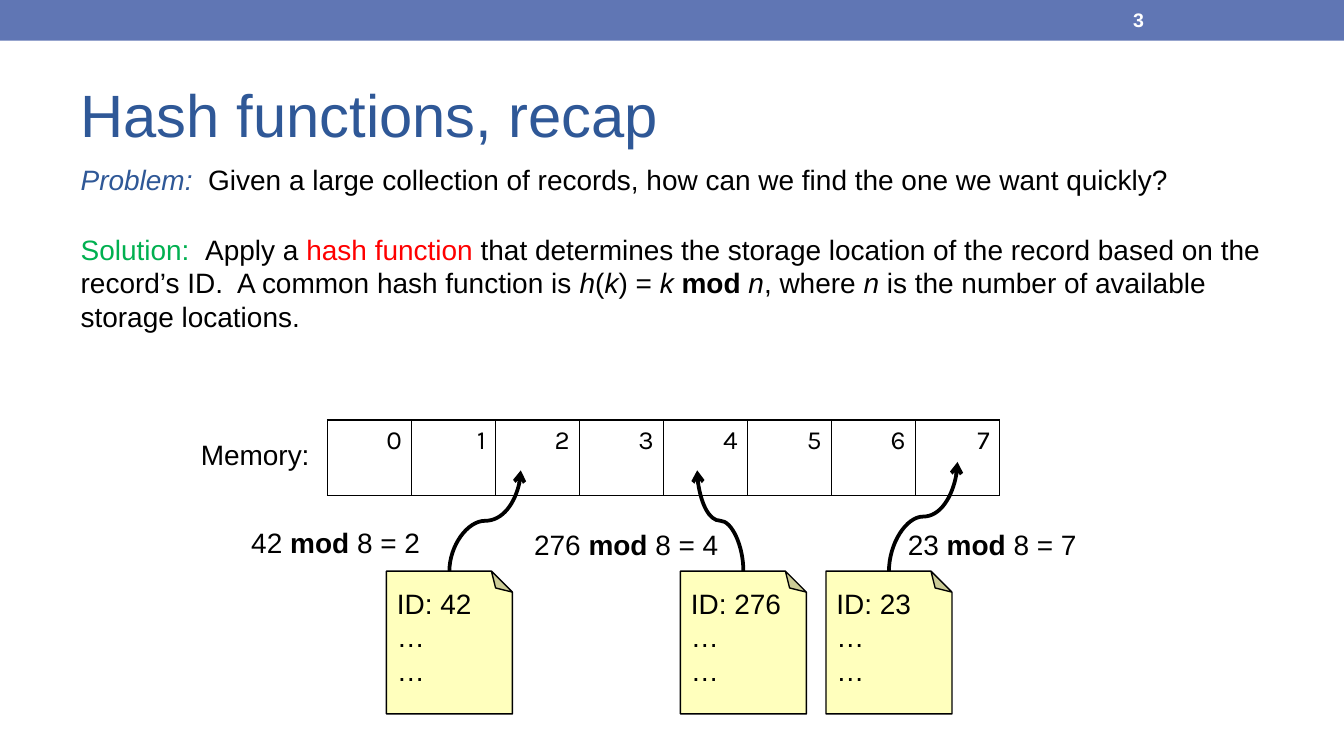
"""Build the slide that recaps hash functions with a memory table and three records."""
from lxml import etree
from pptx import Presentation
from pptx.dml.color import RGBColor
from pptx.enum.shapes import MSO_CONNECTOR, MSO_SHAPE
from pptx.enum.text import MSO_ANCHOR, MSO_AUTO_SIZE, PP_ALIGN
from pptx.oxml.ns import qn
from pptx.util import Pt

PX = 9525
CURVE = MSO_CONNECTOR.CURVE
RECT, NOTE = MSO_SHAPE.RECTANGLE, MSO_SHAPE.FOLDED_CORNER
MIDDLE, TOP = MSO_ANCHOR.MIDDLE, MSO_ANCHOR.TOP
LEFT, RIGHT = PP_ALIGN.LEFT, PP_ALIGN.RIGHT
FIXED = MSO_AUTO_SIZE.NONE
HEX = {
    "bar": "6076B4",
    "blue": "2F5897",
    "green": "00B050",
    "red": "FF0000",
    "black": "000000",
    "white": "FFFFFF",
    "note": "FFFFBD",
}
RGB = {name: RGBColor.from_string(code) for name, code in HEX.items()}


def write(para, parts, size=15, face="Arial"):
    """Add runs of (text, colour, style), where style may hold b and i."""
    for text, color, style in parts:
        run = para.add_run()
        run.text = text
        font = run.font
        font.name, font.size = face, Pt(size)
        font.color.rgb = RGB[color]
        font.bold, font.italic = "b" in style, "i" in style


def label(x, y, w, h, lines):
    """Add an unwrapped text box with one list of runs per line."""
    box = slide.shapes.add_textbox(x * PX, y * PX, w * PX, h * PX)
    frame = box.text_frame
    frame.word_wrap = False
    for i, parts in enumerate(lines):
        para = frame.add_paragraph() if i else frame.paragraphs[0]
        write(para, parts)
    return frame


prs = Presentation()
prs.slide_width, prs.slide_height = 960 * PX, 540 * PX
slide = prs.slides.add_slide(prs.slide_layouts[1])
shapes = slide.shapes

bar = shapes.add_shape(RECT, 0, 0, 960 * PX, 29 * PX)
bar.shadow.inherit = False
bar.fill.solid()
bar.fill.fore_color.rgb = RGB["bar"]
bar.line.fill.background()

title, body = shapes.title, slide.placeholders[1]
for holder, y, h, anchor in ((title, 42, 78, MIDDLE), (body, 111, 192, TOP)):
    holder.left, holder.top = 48 * PX, y * PX
    holder.width, holder.height = 864 * PX, h * PX
    holder.text_frame.auto_size = FIXED
    holder.text_frame.vertical_anchor = anchor

head = title.text_frame.paragraphs[0]
head.alignment = LEFT
write(head, [("Hash functions, recap", "blue", "")], 32)

problem = [
    ("Problem:  ", "blue", "i"),
    ("Given a large collection of records, how can we find the one we want quickly?", "black", ""),
]
answer = [
    ("Solution:  ", "green", ""),
    ("Apply a ", "black", ""),
    ("hash function ", "red", ""),
    ("that determines the storage location of the record based on the "
     "record’s ID.  A common hash function is ", "black", ""),
    ("h", "black", "i"),
    ("(", "black", ""),
    ("k", "black", "i"),
    (") = ", "black", ""),
    ("k ", "black", "i"),
    ("mod ", "black", "b"),
    ("n", "black", "i"),
    (", where ", "black", ""),
    ("n", "black", "i"),
    (" is the number of available storage locations.", "black", ""),
]
frame = body.text_frame
for para, parts, gap in (
    (frame.paragraphs[0], problem, 3.6),
    (frame.add_paragraph(), answer, 19.5),
):
    para.space_before = Pt(gap)
    props = para._p.get_or_add_pPr()
    props.set("marL", "0")
    props.set("indent", "0")
    etree.SubElement(props, qn("a:buNone"))
    write(para, parts)

table = shapes.add_table(1, 8, 234 * PX, 300 * PX, 480 * PX, 54 * PX).table
table.first_row = table.horz_banding = False
for i in range(8):
    table.columns[i].width = 60 * PX
    cell = table.cell(0, i)
    cell.margin_left = cell.margin_right = 7 * PX
    cell.margin_top = cell.margin_bottom = 4 * PX
    para = cell.text_frame.paragraphs[0]
    para.alignment = RIGHT
    write(para, [(str(i), "black", "")], 14, "Karla")
    props = cell._tc.get_or_add_tcPr()
    for side in ("lnL", "lnR", "lnT", "lnB"):
        edge = etree.SubElement(props, qn("a:" + side), w=str(Pt(1)))
        fill = etree.SubElement(edge, qn("a:solidFill"))
        etree.SubElement(fill, qn("a:srgbClr"), val=HEX["black"])
    cell.fill.background()

label(134, 308, 98, 34, [[("Memory:", "black", "")]])

records = (
    (276, 42, 2, (170, 371, 141), (321, 372, 336)),
    (486, 276, 4, (372, 372, 153), (531, 498, 336)),
    (590, 23, 7, (639, 372, 148), (635, 684, 330)),
)
for x, key, slot, (lx, ly, lw), (x1, x2, top) in records:
    note = shapes.add_shape(NOTE, x * PX, 408 * PX, 90 * PX, 102 * PX)
    note.shadow.inherit = False
    note._element.spPr.xfrm.set("flipV", "1")
    note.fill.solid()
    note.fill.fore_color.rgb = RGB["note"]
    note.line.color.rgb = RGB["black"]
    note.line.width = Pt(0.75)
    lines = (f"ID: {key}", "…", "…")
    label(x - 2, 414, 84, 83, [[(line, "black", "")] for line in lines])

    mx, my = (x1 + x2) / 2, (408 + top) / 2
    rise, run = (408 - top) / 2, (x2 - x1) / 2
    ends = (mx - rise, my - run, mx + rise, my + run)
    arrow = shapes.add_connector(CURVE, *(int(v * PX) for v in ends))
    arrow.line.color.rgb = RGB["black"]
    arrow.line.width = Pt(2)
    props = arrow._element.spPr
    props.find(qn("a:xfrm")).set("rot", str(270 * 60000))
    etree.SubElement(props.find(qn("a:ln")), qn("a:tailEnd"), type="arrow")
    etree.SubElement(props, qn("a:effectLst"))

    parts = [(f"{key} ", "black", ""), ("mod", "black", "b"), (f" 8 = {slot}", "black", "")]
    label(lx, ly, lw, 34, [parts])

page = label(800, 1, 112, 26, [])
page.vertical_anchor = MIDDLE
write(page.paragraphs[0], [("3", "white", "b")], 10.5)

prs.save("out.pptx")
